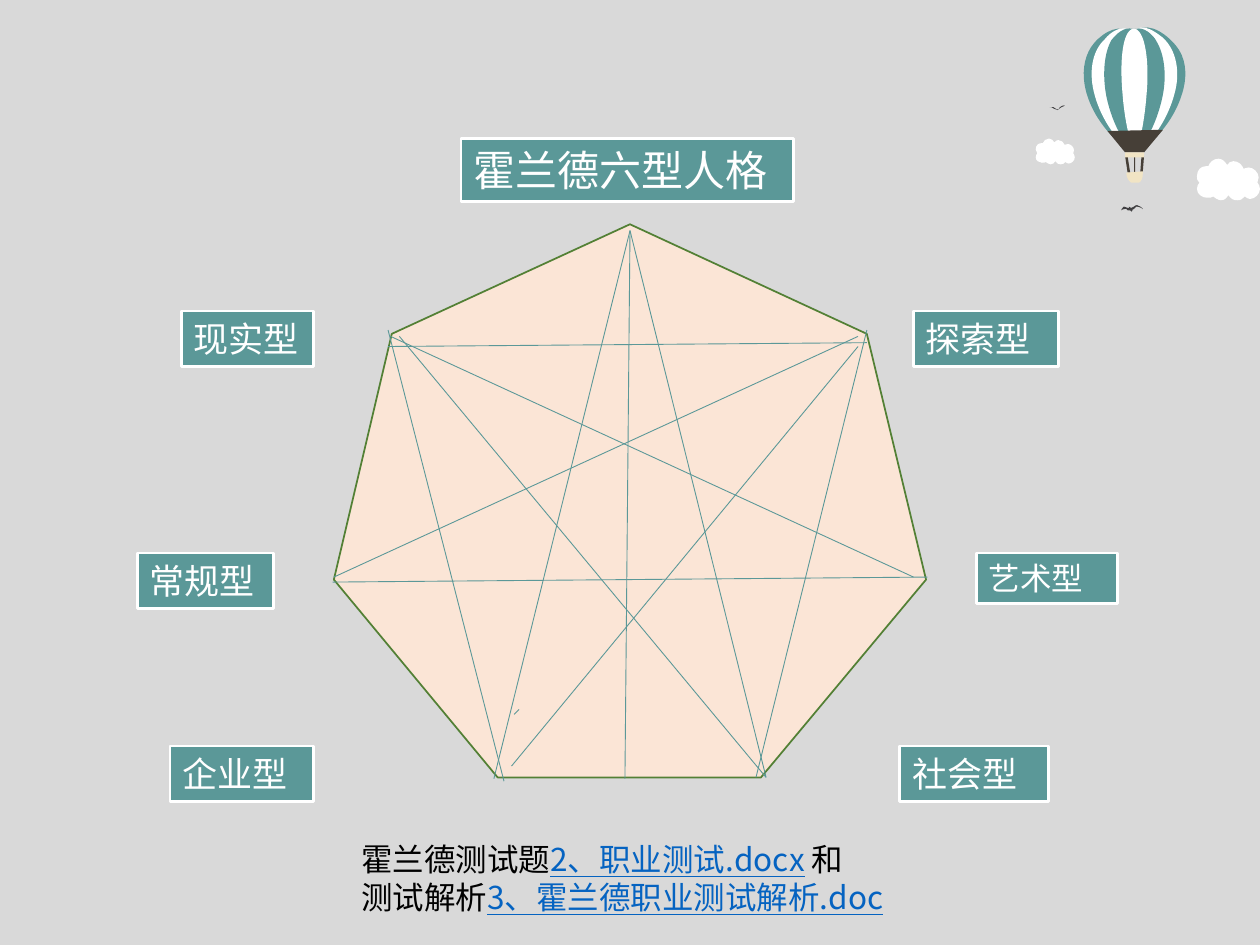
from lxml import etree
from pptx import Presentation
from pptx.dml.color import RGBColor
from pptx.enum.shapes import MSO_CONNECTOR, MSO_SHAPE
from pptx.enum.text import MSO_ANCHOR, PP_ALIGN
from pptx.oxml.ns import qn
from pptx.util import Inches, Pt

RECTANGLE, LINE = MSO_SHAPE.RECTANGLE, MSO_CONNECTOR.STRAIGHT
LEFT, MIDDLE = PP_ALIGN.LEFT, MSO_ANCHOR.MIDDLE
FONT = "Noto Sans CJK SC"
COLORS = {"background": "D9D9D9", "teal": "5B9898", "white": "FFFFFF", "dark": "463F37",
          "cream": "F1E4C4", "bird": "414042", "peach": "FBE5D6", "green": "538035",
          "black": "000000", "link": "0563C1"}

# Labels: text, left, top, width, height, text size
LABELS = [
    ("探索型", 7.25, 2.47, 1.15, 0.44, 20),
    ("艺术型", 7.75, 4.39, 1.12, 0.4, 18),
    ("社会型", 7.14, 5.92, 1.18, 0.44, 20),
    ("企业型", 1.35, 5.92, 1.14, 0.44, 20),
    ("常规型", 1.09, 4.39, 1.08, 0.44, 20),
    ("现实型", 1.44, 2.47, 1.05, 0.44, 20),
    ("霍兰德六型人格", 3.66, 1.1, 2.64, 0.5, 24),
]
FOOTER = [
    [("霍兰德测试题", False), ("2、职业测试.docx", True), (" 和", False)],
    [("测试解析", False), ("3、霍兰德职业测试解析.doc", True)],
]

# Heptagon and the lines across it
HEPTAGON = [(3.95, 6.17), (2.65, 4.6), (3.11, 2.65), (5, 1.78),
            (6.88, 2.65), (7.35, 4.6), (6.04, 6.17)]
DIAGONALS = [
    (6.81, 2.75, 4.06, 6.08), (3.17, 2.67, 6.08, 6.17), (5, 1.83, 4.96, 6.18),
    (2.64, 4.62, 7.36, 4.58), (3.08, 2.62, 4, 6.2), (6.88, 2.62, 6, 6.17),
    (3.08, 2.75, 6.88, 2.72), (4.12, 5.63, 4.08, 5.67), (2.65, 4.58, 6.81, 2.67),
    (3.1, 2.67, 7.25, 4.58), (5, 1.83, 3.92, 6.18), (5, 1.83, 6.08, 6.17),
]

# Curved outlines: a start point, then two handles and an end point per curve
CLOUD = [
    (.17, 0), (.13, 0), (.1, .03), (.09, .06), (.08, .06), (.08, .06), (.07, .06),
    (.03, .06), (0, .09), (0, .14), (0, .16), (0, .17), (.02, .19),
    (.01, .2), (0, .22), (0, .24), (0, .28), (.04, .31), (.08, .31),
    (.1, .31), (.12, .31), (.13, .3), (.14, .31), (.17, .33), (.19, .33),
    (.22, .33), (.24, .31), (.25, .29), (.27, .32), (.29, .33), (.32, .33),
    (.35, .33), (.36, .32), (.38, .3), (.39, .31), (.41, .32), (.42, .32),
    (.46, .32), (.5, .28), (.5, .24), (.5, .22), (.49, .2), (.48, .19),
    (.48, .17), (.49, .16), (.49, .15), (.49, .11), (.45, .07), (.41, .07),
    (.39, .07), (.38, .08), (.37, .08), (.36, .05), (.33, .02), (.29, .02),
    (.27, .02), (.25, .03), (.24, .05), (.22, .02), (.2, 0), (.17, 0),
]
CLOUD_PLACES = [(9.5, 1.26, 1), (8.22, 1.1, 0.62)]  # left, top, scale
STRIPES = [
    ("white", [(9.23, .3), (9.34, .4), (9.37, .58), (9.32, .75), (9.25, 1.01), (9.07, 1.2),
               (9.01, 1.2), (8.94, 1.2), (8.76, 1.01), (8.69, .76), (8.64, .59), (8.66, .41),
               (8.77, .31), (8.81, .26), (8.88, .21), (8.95, .23), (8.96, .23), (8.99, .23),
               (9, .24), (9.02, .23), (9.03, .23), (9.05, .22), (9.12, .21), (9.19, .27), (9.23, .3)]),
    ("teal", [(9.18, .33), (9.24, .43), (9.26, .59), (9.23, .75), (9.18, 1.01), (9.05, 1.2),
              (9.01, 1.2), (8.96, 1.2), (8.83, 1.01), (8.78, .76), (8.75, .6), (8.76, .43),
              (8.82, .32), (8.86, .27), (8.92, .21), (8.99, .23), (8.99, .23), (8.99, .23),
              (9, .23), (9, .23), (9.01, .23), (9.02, .23), (9.07, .21), (9.15, .27), (9.18, .33)]),
    ("white", [(9.04, .25), (9.1, .32), (9.12, .54), (9.1, .75), (9.08, 1.01), (9.03, 1.2),
               (9.01, 1.2), (8.99, 1.2), (8.93, 1.01), (8.91, .75), (8.89, .54), (8.9, .32),
               (8.96, .25), (8.98, .22), (9.02, .22), (9.04, .25)]),
]
ENVELOPE = [(9.36, .4), (9.42, .5), (9.42, .63), (9.38, .75), (9.3, 1.01), (9.08, 1.2),
            (9.01, 1.2), (8.93, 1.2), (8.71, 1.01), (8.63, .76), (8.59, .64), (8.59, .51),
            (8.64, .41), (8.68, .32), (8.81, .21), (8.91, .23), (8.94, .23), (8.97, .23),
            (9, .24), (9.02, .23), (9.05, .23), (9.07, .22), (9.18, .2), (9.31, .32), (9.36, .4)]
BASKET = [(9.07, 1.36), (9.07, 1.37), (9.07, 1.37), (9.07, 1.38), (9.07, 1.41), (9.06, 1.44),
          (9.04, 1.45), (8.98, 1.45), (8.98, 1.45), (8.98, 1.45), (8.96, 1.44), (8.94, 1.41),
          (8.94, 1.38), (8.94, 1.37), (8.94, 1.37), (8.94, 1.37)]
LEFT_ROPE = [(8.93, 1.24), (8.95, 1.37), (8.97, 1.37), (8.95, 1.24)]
MIDDLE_ROPE = (9, 1.24, 0.01, 0.13)
RIGHT_ROPE = [(9.06, 1.24), (9.05, 1.37), (9.07, 1.37), (9.08, 1.24)]
SKIRT = [(9.23, 1.03), (9.08, 1.21), (8.93, 1.21), (8.79, 1.04)]
RIM = (8.93, 1.21, 0.15, 0.04)
BIRDS = [
    [(8.43, .84), (8.42, .84), (8.4, .86), (8.4, .87), (8.39, .87), (8.37, .86), (8.36, .85),
     (8.36, .85), (8.36, .85), (8.36, .85), (8.35, .85), (8.33, .85), (8.33, .85),
     (8.33, .85), (8.36, .85), (8.36, .86), (8.37, .87), (8.39, .87), (8.39, .87),
     (8.39, .87), (8.4, .88), (8.4, .87), (8.4, .87), (8.41, .86), (8.41, .86),
     (8.42, .86), (8.43, .84), (8.45, .84), (8.45, .84), (8.45, .84), (8.45, .84),
     (8.45, .84), (8.45, .83), (8.43, .84)],
    [(8.9, 1.67), (8.9, 1.67), (8.9, 1.65), (8.92, 1.64), (8.93, 1.64), (8.94, 1.64),
     (8.95, 1.65), (8.97, 1.66), (8.96, 1.65), (8.96, 1.65), (8.96, 1.65), (8.96, 1.65),
     (8.96, 1.64), (8.96, 1.64), (8.97, 1.65), (8.98, 1.65), (8.99, 1.65), (8.99, 1.65),
     (9, 1.64), (9.02, 1.62), (9.03, 1.63), (9.05, 1.64), (9.07, 1.65), (9.07, 1.66),
     (9.07, 1.66), (9.07, 1.66), (9.05, 1.64), (9.02, 1.64), (9.01, 1.65), (8.99, 1.67),
     (8.98, 1.67), (8.98, 1.67), (8.99, 1.67), (8.99, 1.67), (8.98, 1.67), (8.98, 1.67),
     (8.98, 1.68), (8.98, 1.68), (8.97, 1.67), (8.97, 1.67), (8.97, 1.67), (8.96, 1.67),
     (8.95, 1.67), (8.94, 1.66), (8.94, 1.65), (8.92, 1.66), (8.91, 1.66), (8.9, 1.67),
     (8.9, 1.67)],
]


def color(name):
    return RGBColor.from_string(COLORS[name])


def paint(shape, fill, line=None, width=1):
    shape.shadow.inherit = False
    shape.fill.solid()
    shape.fill.fore_color.rgb = color(fill)
    if line:
        shape.line.color.rgb = color(line)
        shape.line.width = Pt(width)
    else:
        shape.line.fill.background()


def add_outline(slide, points, fill, line=None):
    corners = [(Inches(x), Inches(y)) for x, y in points]
    builder = slide.shapes.build_freeform(*corners[0])
    builder.add_line_segments(corners[1:], close=True)
    shape = builder.convert_to_shape()
    paint(shape, fill, line)
    return shape


def add_curve(slide, points, fill):
    """Draw an outline, then merge every three segments into one cubic curve."""
    shape = add_outline(slide, points, fill)
    segments = list(shape._element.iter(qn("a:lnTo")))
    for first in range(0, len(points) - 1, 3):
        start, *others = segments[first:first + 3]
        bezier = etree.Element(qn("a:cubicBezTo"))
        start.addprevious(bezier)
        for segment in (start, *others):
            bezier.append(segment[0])
            segment.getparent().remove(segment)


def add_box(slide, box, fill, line=None, width=1):
    shape = slide.shapes.add_shape(RECTANGLE, *map(Inches, box))
    paint(shape, fill, line, width)
    return shape


def add_text(paragraph, text, size=18, fill="black", underline=False):
    run = paragraph.add_run()
    run.text = text
    run.font.size, run.font.name = Pt(size), FONT
    run.font.color.rgb = color(fill)
    if underline:
        run.font.underline = True
    etree.SubElement(run.font._element, qn("a:ea"), typeface=FONT)


def main():
    presentation = Presentation()
    presentation.slide_width, presentation.slide_height = Inches(10), Inches(7.5)
    slide = presentation.slides.add_slide(presentation.slide_layouts[6])
    slide.background.fill.solid()
    slide.background.fill.fore_color.rgb = color("background")

    # Clouds, balloon and birds
    for left, top, scale in CLOUD_PLACES:
        add_curve(slide, [(left + x * scale, top + y * scale) for x, y in CLOUD], "white")
    add_outline(slide, LEFT_ROPE, "dark")
    add_box(slide, MIDDLE_ROPE, "dark")
    add_outline(slide, RIGHT_ROPE, "dark")
    add_curve(slide, ENVELOPE, "teal")
    add_curve(slide, BASKET, "cream")
    for fill, stripe in STRIPES:
        add_curve(slide, stripe, fill)
    add_outline(slide, SKIRT, "dark")
    add_box(slide, RIM, "cream")
    for bird in BIRDS:
        add_curve(slide, bird, "bird")

    # Heptagon and labels
    add_outline(slide, HEPTAGON, "peach", "green")
    for text, *box, size in LABELS:
        frame = add_box(slide, box, "teal", "white", 1.5).text_frame
        frame.word_wrap, frame.vertical_anchor = True, MIDDLE
        frame.paragraphs[0].alignment = LEFT
        add_text(frame.paragraphs[0], text, size=size, fill="white")

    # Lines across the heptagon
    for ends in DIAGONALS:
        diagonal = slide.shapes.add_connector(LINE, *map(Inches, ends))
        diagonal.line.color.rgb = color("teal")
        diagonal.line.width = Pt(0.5)
        etree.SubElement(diagonal._element.spPr, qn("a:effectLst"))

    # Footer
    frame = slide.shapes.add_textbox(*map(Inches, (2.77, 6.62, 4.82, 0.71))).text_frame
    frame.word_wrap = True
    for index, runs in enumerate(FOOTER):
        paragraph = frame.add_paragraph() if index else frame.paragraphs[0]
        for text, linked in runs:
            add_text(paragraph, text, fill="link" if linked else "black", underline=linked)

    presentation.save("out.pptx")


if __name__ == "__main__":
    main()
